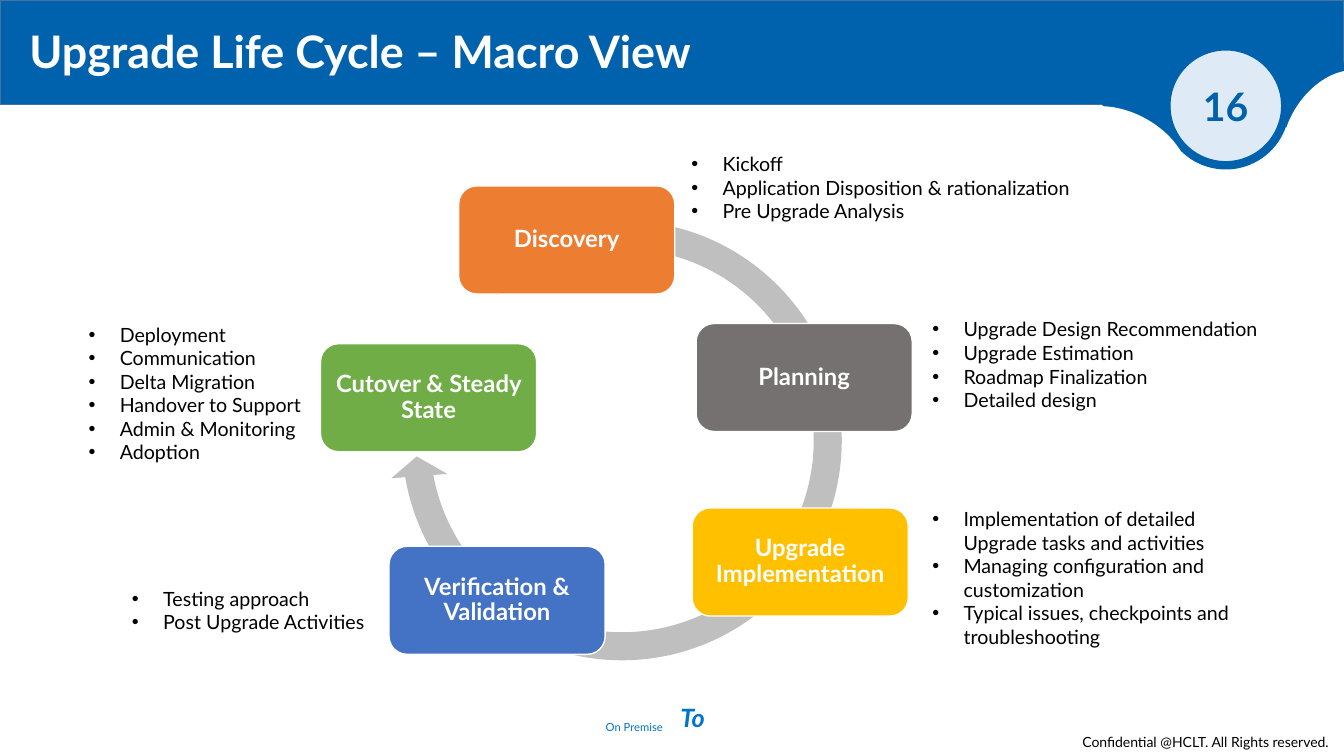
from dataclasses import dataclass

from lxml import etree
from pptx import Presentation
from pptx.dml.color import RGBColor
from pptx.enum.shapes import MSO_SHAPE
from pptx.enum.text import MSO_ANCHOR, MSO_AUTO_SIZE, PP_ALIGN
from pptx.oxml.ns import qn
from pptx.util import Inches, Pt

RECT, OVAL = MSO_SHAPE.RECTANGLE, MSO_SHAPE.OVAL
ROUND, ARROW = MSO_SHAPE.ROUNDED_RECTANGLE, MSO_SHAPE.CIRCULAR_ARROW
MIDDLE, TOP = MSO_ANCHOR.MIDDLE, MSO_ANCHOR.TOP
LEFT, CENTER = PP_ALIGN.LEFT, PP_ALIGN.CENTER
GROW, FIXED = MSO_AUTO_SIZE.SHAPE_TO_FIT_TEXT, MSO_AUTO_SIZE.NONE


@dataclass(frozen=True)
class Theme:
    font: str = "Lato"
    white: str = "FFFFFF"
    black: str = "000000"
    blue: str = "0062AD"
    sky: str = "0074C9"
    pale: str = "DEEBF7"
    edge: str = "43739E"
    ring: str = "BFBFBF"
    orange: str = "ED7D31"
    gray: str = "767171"
    gold: str = "FFC000"
    navy: str = "4472C4"
    green: str = "70AD47"
    title: int = 32
    number: int = 28
    link: int = 18
    card: int = 17
    body: int = 14
    foot: int = 10
    small: int = 8


class Deck:
    def __init__(self, theme):
        self.theme = theme
        self.file = Presentation()
        self.file.slide_width, self.file.slide_height = Inches(13.333), Inches(7.5)
        self.slide = self.file.slides.add_slide(self.file.slide_layouts[5])

    def area(self, box):
        """Turn left, top, width, height in percent of the slide into lengths."""
        sides = (self.file.slide_width, self.file.slide_height) * 2
        return [round(side * part / 100) for side, part in zip(sides, box)]

    def fill_text(self, frame, lines, size, color, bold=False, italic=False,
                  align=LEFT, spacing=None, bullet=False, **layout):
        layout = {"word_wrap": True, "auto_size": GROW, "vertical_anchor": TOP, **layout}
        for name, value in layout.items():
            setattr(frame, name, value)
        look = {"name": self.theme.font, "size": Pt(size), "bold": bold, "italic": italic}
        for i, line in enumerate(lines):
            para = frame.add_paragraph() if i else frame.paragraphs[0]
            para.alignment, para.line_spacing = align, spacing
            if bullet:
                self.dot(para)
            run = para.add_run()
            run.text = line
            for name, value in look.items():
                setattr(run.font, name, value)
            run.font.color.rgb = RGBColor.from_string(color)

    def dot(self, para):
        props = para._p.get_or_add_pPr()
        indent = Inches(0.31)
        props.set("marL", str(indent))
        props.set("indent", str(-indent))
        etree.SubElement(props, qn("a:buFont")).set("typeface", "Arial")
        etree.SubElement(props, qn("a:buChar")).set("char", "•")

    def text(self, box, lines, size, color, **style):
        shape = self.slide.shapes.add_textbox(*self.area(box))
        self.fill_text(shape.text_frame, lines, size, color, **style)

    def title(self, box, line):
        shape = self.slide.shapes.title
        shape.left, shape.top, shape.width, shape.height = self.area(box)
        self.fill_text(shape.text_frame, [line], self.theme.title, self.theme.white, bold=True,
                       spacing=0.9, auto_size=FIXED, vertical_anchor=MIDDLE)
        # Bring the title in front of the header band
        shape.element.getparent().append(shape.element)

    def shape(self, kind, box, fill, line=None, width=1, turn=0):
        shape = self.slide.shapes.add_shape(kind, *self.area(box))
        shape.shadow.inherit = False
        shape.rotation = turn
        shape.fill.solid()
        shape.fill.fore_color.rgb = RGBColor.from_string(fill)
        if line:
            shape.line.color.rgb = RGBColor.from_string(line)
            shape.line.width = Pt(width)
        else:
            shape.line.fill.background()
        return shape

    def cycle(self, box, turn, bends):
        arrow = self.shape(ARROW, box, self.theme.ring, turn=turn)
        for i, bend in enumerate(bends):
            arrow.adjustments[i] = bend

    def card(self, spot, label, fill):
        shape = self.shape(ROUND, (*spot, 16.08, 14.29), fill, self.theme.white)
        pads = {"margin_" + side: Inches(0.07) for side in ("left", "top", "right", "bottom")}
        self.fill_text(shape.text_frame, [label], self.theme.card, self.theme.white, bold=True,
                       align=CENTER, spacing=0.9, auto_size=FIXED, vertical_anchor=MIDDLE, **pads)

    def points(self, box, lines):
        self.text(box, lines, self.theme.body, self.theme.black, bullet=True)


def main():
    look = Theme()
    deck = Deck(look)

    deck.text((79.8, 96.4, 20.18, 3.6), ["Confidential @HCLT. All Rights reserved."],
              look.foot, look.black, word_wrap=False)
    deck.text((44.33, 94.67, 6.68, 3.2), ["On Premise"], look.small, look.sky)
    deck.text((49.88, 92.27, 3.53, 5.33), ["To"], look.link, look.sky,
              bold=True, italic=True, word_wrap=False)

    deck.shape(RECT, (0, 0, 100, 13.87), look.blue, look.edge)
    deck.shape(RECT, (95.25, 7.33, 5.03, 9.07), look.blue, turn=349.9)
    deck.shape(OVAL, (86.78, 6.13, 8.85, 15.73), look.pale, look.blue, width=6)
    deck.shape(RECT, (82.05, 9.6, 5.03, 9.07), look.blue, turn=356.6)
    deck.shape(OVAL, (77.93, 14.8, 10.88, 13.33), look.white, turn=27.8)
    deck.shape(OVAL, (94.28, 11.33, 10.5, 13.33), look.white, turn=300.2)
    deck.text((88.05, 10.27, 6.3, 7.6), ["16"], look.number, look.blue,
              bold=True, align=CENTER)
    deck.title((1.43, 2.27, 85.8, 9.73), "Upgrade Life Cycle – Macro View")

    deck.cycle((28.88, 27.33, 34.8, 61.87), 299.9, (0.06, 3.31, 138.08, 173.66, 0.06))
    stages = [
        ("Discovery", look.orange, (34.13, 24.6), (50.7, 19.47, 30.9, 10.8),
         ["Kickoff", "Application Disposition & rationalization", "Pre Upgrade Analysis"]),
        ("Planning", look.gray, (51.8, 42.8), (68.63, 41.33, 26.03, 17.07),
         ["Upgrade Design Recommendation", "Upgrade Estimation",
          "Roadmap Finalization", "Detailed design"]),
        ("Upgrade Implementation", look.gold, (51.5, 67.2), (68.63, 66.4, 26.03, 20.13),
         ["Implementation of detailed Upgrade tasks and activities",
          "Managing configuration and customization",
          "Typical issues, checkpoints and troubleshooting"]),
        ("Verification & Validation", look.navy, (28.95, 72.27), (9.08, 76.93, 26.03, 7.6),
         ["Testing approach", "Post Upgrade Activities"]),
        ("Cutover & Steady State", look.green, (23.85, 45.47), (5.85, 42, 26.03, 20.13),
         ["Deployment", "Communication", "Delta Migration", "Handover to Support",
          "Admin & Monitoring", "Adoption"]),
    ]
    for label, fill, spot, box, lines in stages:
        deck.card(spot, label, fill)
        deck.points(box, lines)

    deck.file.save("out.pptx")


if __name__ == "__main__":
    main()
